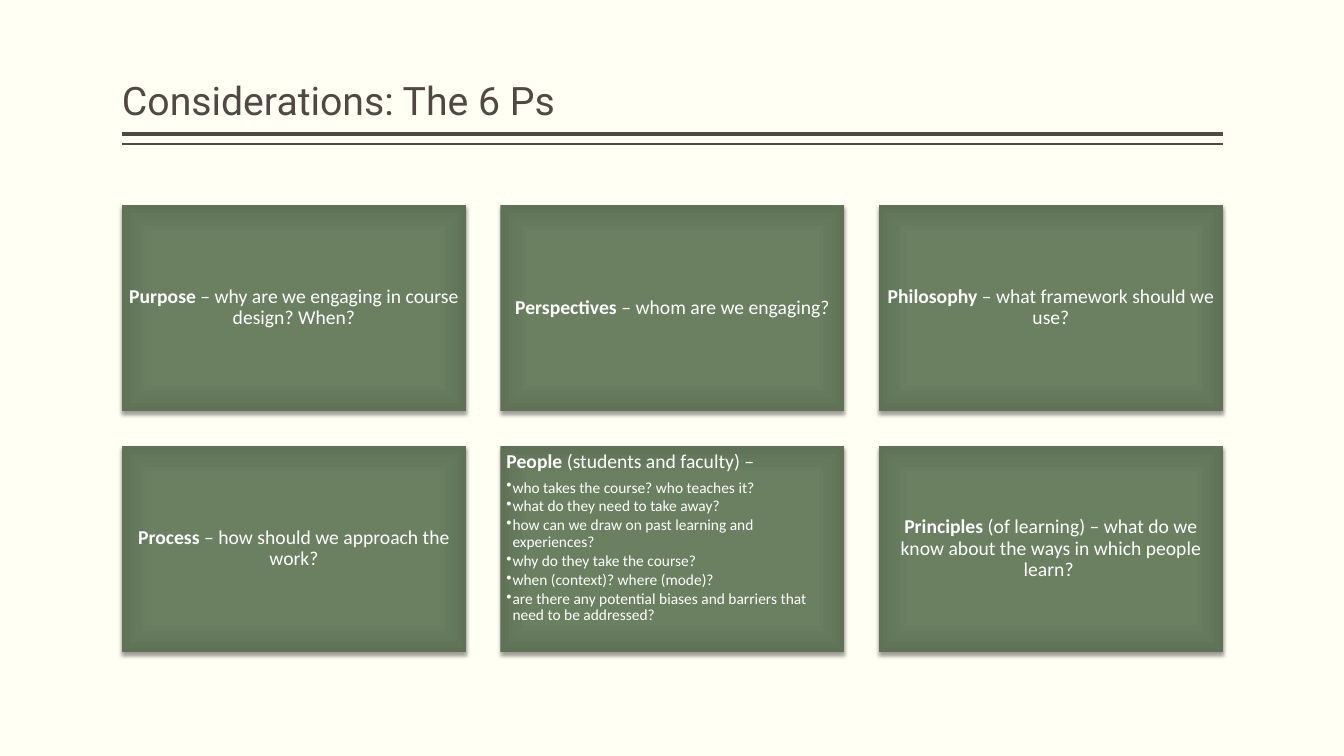
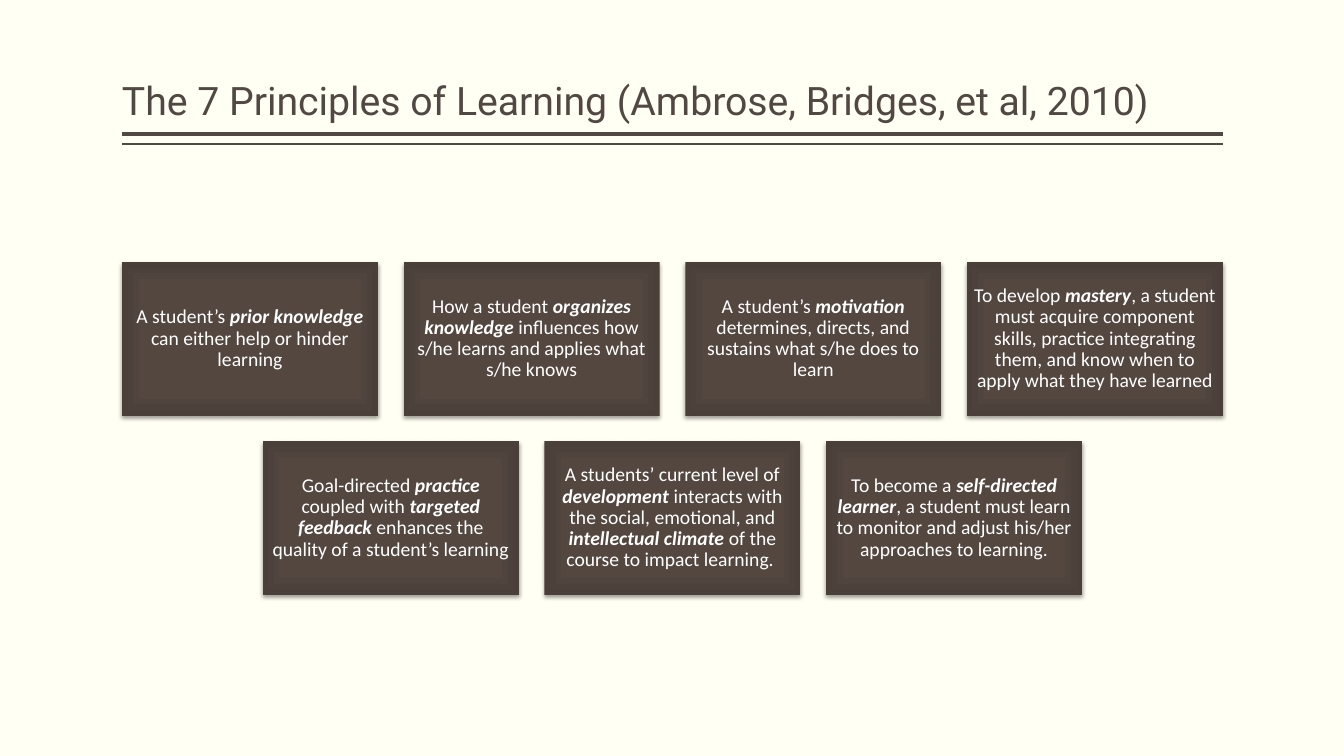
from pptx import Presentation
from pptx.dml.color import RGBColor
from pptx.enum.shapes import MSO_CONNECTOR, MSO_SHAPE
from pptx.enum.text import MSO_ANCHOR, PP_ALIGN
from pptx.oxml import parse_xml
from pptx.oxml.ns import nsdecls, qn
from pptx.util import Inches, Pt
from lxml import etree

COLORS = {"paper": "FFFFF3", "ink": "514843", "white": "FFFFFF", "shadow": "000000"}
# Card gradients, from the centre to the edge
GRADIENTS = {
    "green": {0: "6B8162", 71: "6A8061", 100: "5F7256"},
    "brown": {0: "544740", 71: "534740", 100: "4A3F39"},
}
TITLE_FONT, BODY_FONT = "Roboto", "Calibri"
TITLE_BOX = (1.21, 0.08, 10.92, 1.2)
CARDS_BOX = (1.21, 2.03, 10.92, 4.44)
RULES = [(1.33, 3), (1.43, 1)]  # height on the slide, weight
GAP_SHARE, HEIGHT_SHARE = 0.1, 0.6  # relative to the card width
INSET = 0.06

# In card texts, asterisks enclose the emphasized words
SIX_PS = [
    ["*Purpose* – why are we engaging in course design? When?"],
    ["*Perspectives* – whom are we engaging?"],
    ["*Philosophy* – what framework should we use?"],
    ["*Process* – how should we approach the work?"],
    ["*People* (students and faculty) –",
     "who takes the course? who teaches it?",
     "what do they need to take away?",
     "how can we draw on past learning and experiences?",
     "why do they take the course?",
     "when (context)? where (mode)?",
     "are there any potential biases and barriers that need to be addressed?"],
    ["*Principles* (of learning) – what do we know about the ways in which people learn? "],
]
SEVEN_PRINCIPLES = [
    ["A student’s *prior knowledge* can either help or hinder learning"],
    ["How a student *organizes knowledge* influences how s/he learns and applies "
     "what s/he knows"],
    ["A student’s *motivation* determines, directs, and sustains what s/he does to learn"],
    ["To develop *mastery*, a student must acquire component skills, practice "
     "integrating them, and know when to apply what they have learned"],
    ["Goal-directed *practice *coupled with *targeted feedback* enhances the quality "
     "of a student’s learning"],
    ["A students’ current level of *development* interacts with the social, emotional, "
     "and *intellectual climate *of the course to impact learning. "],
    ["To become a *self-directed learner*, a student must learn to monitor and adjust "
     "his/her approaches to learning."],
]


def rgb(name):
    return RGBColor.from_string(COLORS[name])


def style_font(font, family, size, color):
    font.name, font.size = family, Pt(size)
    font.color.rgb = rgb(color)


def set_margins(frame, horizontal, vertical):
    frame.margin_left = frame.margin_right = Inches(horizontal)
    frame.margin_top = frame.margin_bottom = Inches(vertical)


def add_header(slide, title, box):
    """Title above a thick and a thin rule."""
    left, top, width, height = box
    heading = slide.shapes.add_textbox(*map(Inches, box)).text_frame
    heading.word_wrap = True
    heading.vertical_anchor = MSO_ANCHOR.BOTTOM
    set_margins(heading, 0, 0.05)
    heading.text = title
    line = heading.paragraphs[0]
    line.line_spacing = 0.9
    style_font(line.runs[0].font, TITLE_FONT, 28, "ink")
    for y, weight in RULES:
        rule = slide.shapes.add_connector(
            MSO_CONNECTOR.STRAIGHT, Inches(left), Inches(y), Inches(left + width), Inches(y))
        rule.line.color.rgb = rgb("ink")
        rule.line.width = Pt(weight)
        etree.SubElement(rule._element.spPr, qn("a:effectLst"))


def paint_card(card, gradient):
    """Gradient towards the edges and a soft shadow below."""
    card.line.fill.background()
    card.fill.background()
    stops = "".join(f'<a:gs pos="{pos * 1000}"><a:srgbClr val="{color}"/></a:gs>'
                    for pos, color in GRADIENTS[gradient].items())
    properties = card._element.spPr
    properties.replace(properties.find(qn("a:noFill")), parse_xml(
        f'<a:gradFill {nsdecls("a")} rotWithShape="1"><a:gsLst>{stops}</a:gsLst>'
        '<a:path path="rect"><a:fillToRect l="50000" t="50000" r="50000" b="50000"/>'
        '</a:path></a:gradFill>'))
    card.shadow.inherit = False
    properties.find(qn("a:effectLst")).append(parse_xml(
        f'<a:outerShdw {nsdecls("a")} blurRad="{Pt(3.1)}" dist="{Pt(2)}" dir="5400000" '
        f'rotWithShape="0"><a:srgbClr val="{COLORS["shadow"]}"><a:alpha val="38000"/>'
        '</a:srgbClr></a:outerShdw>'))


def add_bullet(paragraph):
    properties = paragraph._p.get_or_add_pPr()
    properties.set("marL", str(Inches(INSET)))
    properties.set("indent", str(-Inches(INSET)))
    etree.SubElement(properties, qn("a:buChar")).set("char", "•")


def add_card(slide, lines, box, gradient, italic):
    """One card: a centred statement, or a lead line with bullets."""
    card = slide.shapes.add_shape(MSO_SHAPE.RECTANGLE, *map(Inches, box))
    paint_card(card, gradient)
    frame = card.text_frame
    frame.word_wrap = True
    set_margins(frame, INSET, INSET)
    has_bullets = len(lines) > 1
    frame.vertical_anchor = MSO_ANCHOR.TOP if has_bullets else MSO_ANCHOR.MIDDLE
    for index, line in enumerate(lines):
        paragraph = frame.add_paragraph() if index else frame.paragraphs[0]
        paragraph.alignment = PP_ALIGN.LEFT if has_bullets else PP_ALIGN.CENTER
        paragraph.line_spacing = 0.9
        paragraph.space_after = Pt(1.65 if index else 4.9)
        if index:
            add_bullet(paragraph)
        for part, words in enumerate(line.split("*")):
            if not words:
                continue
            run = paragraph.add_run()
            run.text = words
            style_font(run.font, BODY_FONT, 11 if index else 14, "white")
            emphasized = part % 2 == 1
            run.font.bold = emphasized
            run.font.italic = emphasized and italic


def add_cards(slide, cards, columns, box, gradient, italic):
    """Rows of equal cards, centred in the box both ways."""
    left, top, width, height = box
    card_width = width / (columns + GAP_SHARE * (columns - 1))
    card_height = card_width * HEIGHT_SHARE
    gap = card_width * GAP_SHARE
    rows = [cards[i:i + columns] for i in range(0, len(cards), columns)]
    y = top + (height - len(rows) * (card_height + gap) + gap) / 2
    for row in rows:
        x = left + (width - len(row) * (card_width + gap) + gap) / 2
        for lines in row:
            add_card(slide, lines, (x, y, card_width, card_height), gradient, italic)
            x += card_width + gap
        y += card_height + gap


def add_card_slide(deck, title, cards, columns, gradient, italic=False):
    slide = deck.slides.add_slide(deck.slide_layouts[6])
    slide.background.fill.solid()
    slide.background.fill.fore_color.rgb = rgb("paper")
    add_header(slide, title, TITLE_BOX)
    add_cards(slide, cards, columns, CARDS_BOX, gradient, italic)


def main():
    deck = Presentation()
    deck.slide_width, deck.slide_height = Inches(13.33), Inches(7.5)
    add_card_slide(deck, "Considerations: The 6 Ps", SIX_PS, 3, "green")
    add_card_slide(deck, "The 7 Principles of Learning (Ambrose, Bridges, et al, 2010)",
                   SEVEN_PRINCIPLES, 4, "brown", italic=True)
    deck.save("out.pptx")


if __name__ == "__main__":
    main()
